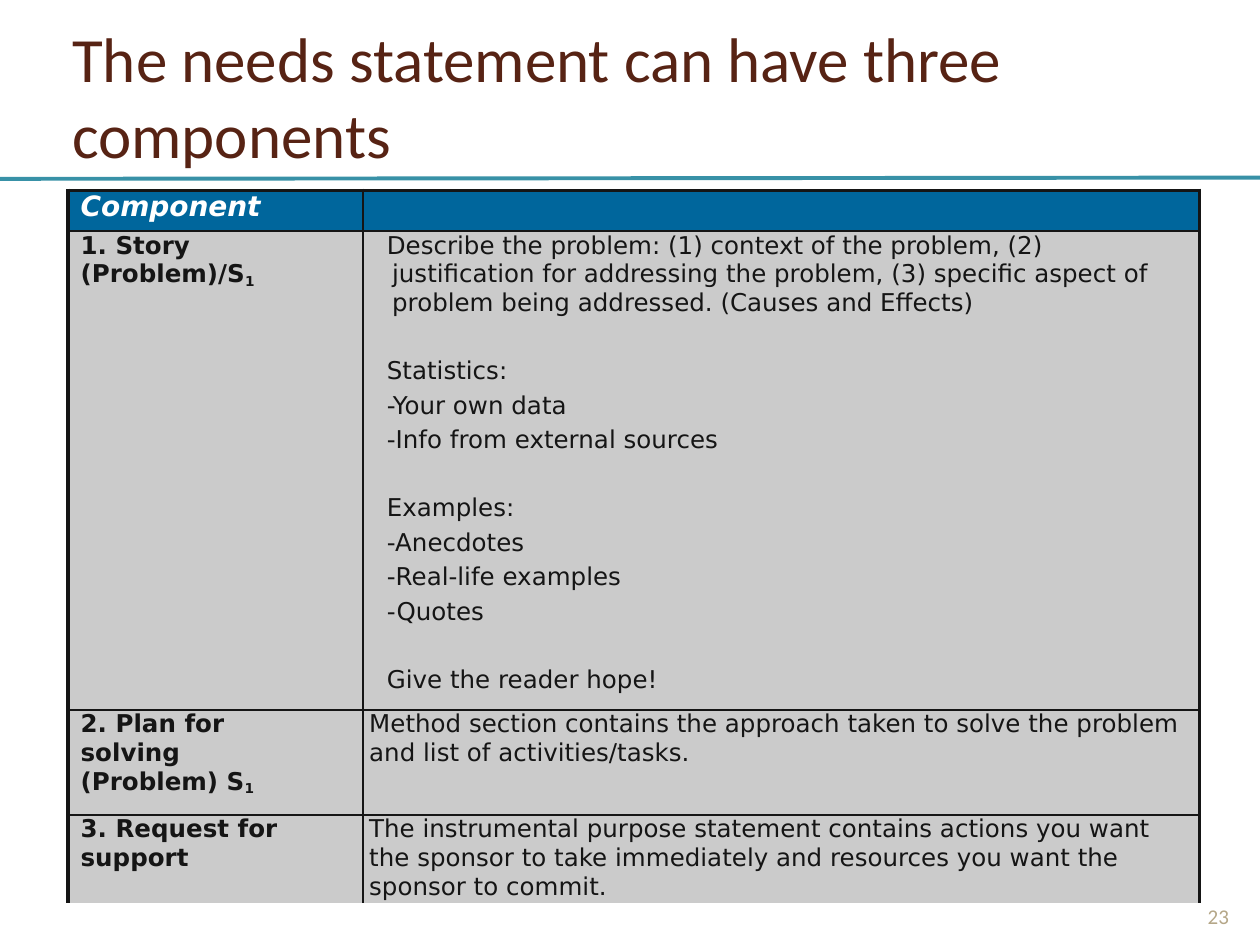
from lxml import etree
from pptx import Presentation
from pptx.dml.color import RGBColor
from pptx.enum.shapes import MSO_CONNECTOR
from pptx.enum.text import MSO_ANCHOR, PP_ALIGN
from pptx.oxml.ns import qn
from pptx.util import Pt

STRAIGHT = MSO_CONNECTOR.STRAIGHT
MIDDLE, BOTTOM = MSO_ANCHOR.MIDDLE, MSO_ANCHOR.BOTTOM
LEFT, CENTER = PP_ALIGN.LEFT, PP_ALIGN.CENTER

TITLE = "The needs statement can have three components"
PAGE = "23"
HEADING = "Component"
COMPONENTS = [
    ("1. Story (Problem)/S", "1", [
        ("intro", "Describe the problem: (1) context of the problem, (2) justification "
                  "for addressing the problem, (3) specific aspect of problem being "
                  "addressed. (Causes and Effects)"),
        ("topic", "Statistics:"),
        ("item", "-Your own data"),
        ("item", "-Info from external sources"),
        ("topic", "Examples:"),
        ("item", "-Anecdotes"),
        ("item", "-Real-life examples"),
        ("item", "-Quotes"),
        ("topic", "Give the reader hope!"),
    ]),
    ("2. Plan for solving (Problem) S", "1", [
        ("plain", "Method section contains the approach taken to solve the problem "
                  "and list of activities/tasks."),
    ]),
    ("3. Request for support", "", [
        ("plain", "The instrumental purpose statement contains actions you want the "
                  "sponsor to take immediately and resources you want the sponsor to commit."),
    ]),
]

THEME = {
    "title": {"name": "Calibri", "size": 36, "color": "572314"},
    "page": {"name": "Calibri", "size": 12, "color": "B5A788"},
    "heading": {"name": "DejaVu Sans", "size": 16, "color": "FFFFFF", "bold": True, "italic": True},
    "component": {"name": "DejaVu Sans", "size": 14, "color": "151515", "bold": True},
    "subscript": {"name": "DejaVu Sans", "size": 13.5, "color": "151515", "bold": True},
    "detail": {"name": "DejaVu Sans", "size": 14, "color": "151515", "bold": False},
    "rule": "3891A7",
    "border": "151515",
    "header_fill": "00669C",
    "body_fill": "CBCBCB",
}
PARAGRAPHS = {
    "title": {"indent": 1},
    "page": {"align": CENTER},
    "label": {"indent": 7.2},
    "intro": {"indent": 16.7, "hang": -3},
    "topic": {"indent": 13.7, "before": 22.6},
    "item": {"indent": 13.7, "before": 3.2},
    "plain": {"indent": 3.6},
}
COLUMN_WIDTHS = [168.5, 478]
ROW_HEIGHTS = [23.4, 273.6, 60, 50.4]
RIGHT_MARGINS = [28, 4]
OUTER, INNER = 2.25, 1


def add_run(paragraph, text, role):
    run = paragraph.add_run()
    run.text = text
    for key, value in THEME[role].items():
        if key == "color":
            run.font.color.rgb = RGBColor.from_string(value)
        else:
            setattr(run.font, key, Pt(value) if key == "size" else value)
    if role == "subscript":
        run.font._element.set("baseline", "-15000")


def format_paragraph(paragraph, kind):
    layout = PARAGRAPHS[kind]
    paragraph.alignment = layout.get("align", LEFT)
    paragraph.space_before = Pt(layout.get("before", 0))
    properties = paragraph._p.get_or_add_pPr()
    properties.set("marL", str(Pt(layout.get("indent", 0))))
    properties.set("indent", str(Pt(layout.get("hang", 0))))


def add_text(slide, box, text, role, **frame_format):
    frame = slide.shapes.add_textbox(*map(Pt, box)).text_frame
    frame.word_wrap = True
    for key, value in frame_format.items():
        setattr(frame, key, value)
    format_paragraph(frame.paragraphs[0], role)
    add_run(frame.paragraphs[0], text, role)


def set_border(cell, side, width):
    line = etree.SubElement(cell._tc.get_or_add_tcPr(), qn("a:" + side), w=str(Pt(width)))
    if width:
        fill = etree.SubElement(line, qn("a:solidFill"))
        etree.SubElement(fill, qn("a:srgbClr"), val=THEME["border"])
    else:
        etree.SubElement(line, qn("a:noFill"))


def style_cell(cell, row, column):
    last_row, last_column = len(ROW_HEIGHTS) - 1, len(COLUMN_WIDTHS) - 1
    for side in ("left", "top", "bottom"):
        setattr(cell, "margin_" + side, 0)
    cell.margin_right = Pt(RIGHT_MARGINS[column])
    borders = {
        "lnL": OUTER if column == 0 else INNER,
        "lnR": OUTER if column == last_column else INNER,
        "lnT": OUTER if row == 0 else INNER,
        "lnB": 0 if row == last_row else INNER,
    }
    for side, width in borders.items():
        set_border(cell, side, width)
    cell.fill.solid()
    cell.fill.fore_color.rgb = RGBColor.from_string(THEME["body_fill" if row else "header_fill"])


def add_components(slide):
    table = slide.shapes.add_table(
        len(ROW_HEIGHTS), len(COLUMN_WIDTHS), Pt(38.9), Pt(108.7),
        Pt(sum(COLUMN_WIDTHS)), Pt(sum(ROW_HEIGHTS))).table
    table.first_row = table.horz_banding = False
    for column, width in zip(table.columns, COLUMN_WIDTHS):
        column.width = Pt(width)
    for row, height in zip(table.rows, ROW_HEIGHTS):
        row.height = Pt(height)
    for row in range(len(ROW_HEIGHTS)):
        for column in range(len(COLUMN_WIDTHS)):
            style_cell(table.cell(row, column), row, column)

    heading = table.cell(0, 0).text_frame.paragraphs[0]
    format_paragraph(heading, "label")
    add_run(heading, HEADING, "heading")
    for row, (component, subscript, details) in enumerate(COMPONENTS, 1):
        label = table.cell(row, 0).text_frame.paragraphs[0]
        format_paragraph(label, "label")
        add_run(label, component, "component")
        if subscript:
            add_run(label, subscript, "subscript")
        frame = table.cell(row, 1).text_frame
        for index, (kind, text) in enumerate(details):
            paragraph = frame.add_paragraph() if index else frame.paragraphs[0]
            format_paragraph(paragraph, kind)
            add_run(paragraph, text, "detail")


def main():
    deck = Presentation()
    deck.slide_width, deck.slide_height = Pt(720), Pt(540)
    slide = deck.slides.add_slide(deck.slide_layouts[6])

    rule = slide.shapes.add_connector(STRAIGHT, 0, Pt(102.2), Pt(720), Pt(101.5))
    rule.line.color.rgb = RGBColor.from_string(THEME["rule"])
    rule.line.width = Pt(2.25)
    etree.SubElement(rule._element.spPr, qn("a:effectLst"))

    add_text(slide, (40.3, 9.4, 632.9, 90), TITLE, "title", vertical_anchor=MIDDLE,
             margin_left=0, margin_top=0, margin_right=0, margin_bottom=0)
    add_components(slide)
    add_text(slide, (678.2, 496.8, 36, 37.4), PAGE, "page", vertical_anchor=BOTTOM)
    deck.save("out.pptx")


if __name__ == "__main__":
    main()
